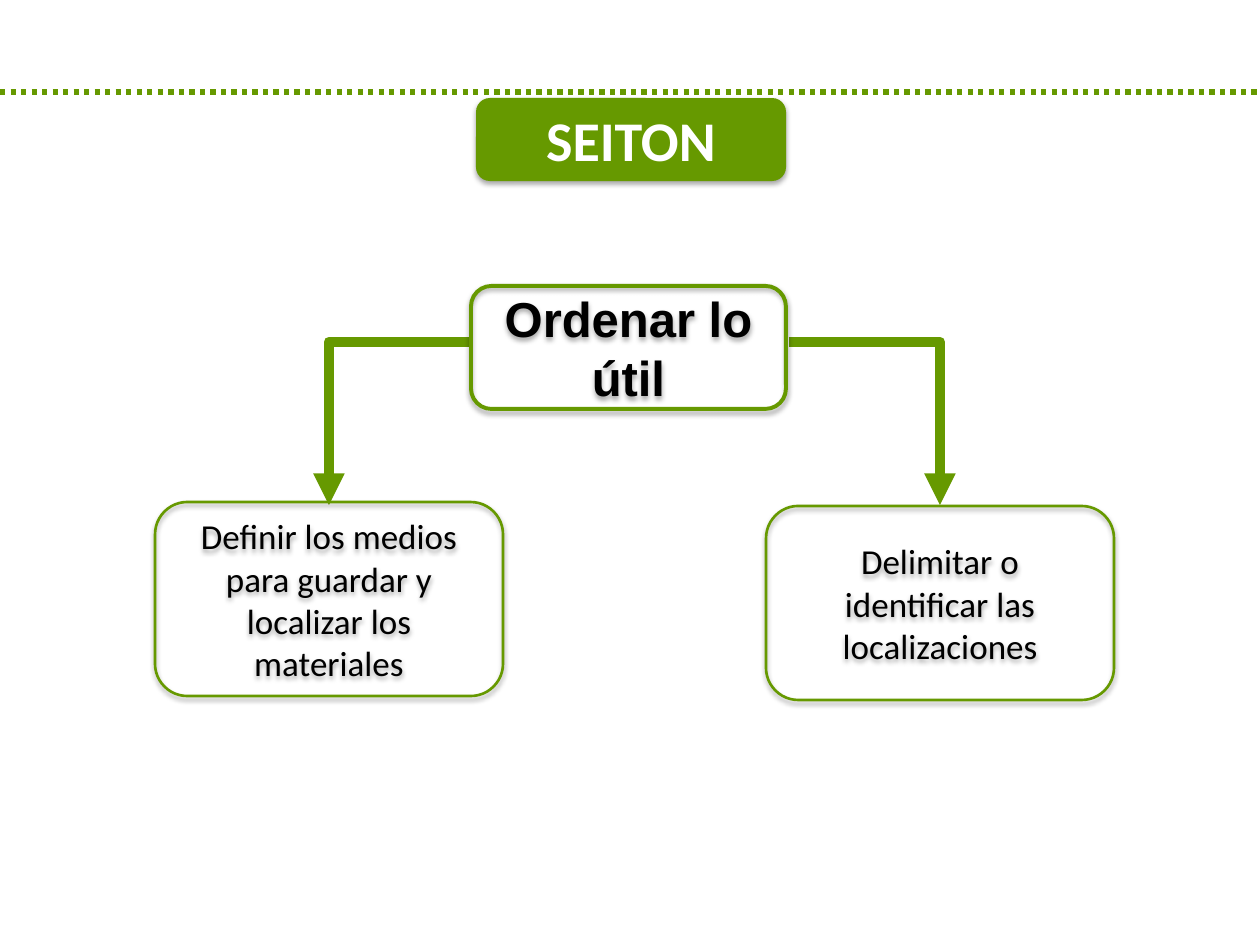
from lxml import etree
from pptx import Presentation
from pptx.dml.color import RGBColor
from pptx.enum.dml import MSO_LINE
from pptx.enum.shapes import MSO_CONNECTOR, MSO_SHAPE
from pptx.enum.text import MSO_ANCHOR, PP_ALIGN
from pptx.oxml.ns import qn
from pptx.util import Emu, Pt

EMU_PER_PX = 914400 / 126
ROUNDED = MSO_SHAPE.ROUNDED_RECTANGLE
STRAIGHT, ELBOW = MSO_CONNECTOR.STRAIGHT, MSO_CONNECTOR.ELBOW
DOTTED = MSO_LINE.ROUND_DOT
MIDDLE, CENTER = MSO_ANCHOR.MIDDLE, PP_ALIGN.CENTER
COLORS = {"green": "669900", "white": "FFFFFF", "black": "000000"}


def px(length):
    return Emu(round(length * EMU_PER_PX))


def color(name):
    return RGBColor.from_string(COLORS[name])


def add_soft_shadow(shape):
    shape.shadow.inherit = False
    effects = shape._element.spPr.find(qn("a:effectLst"))
    shadow = etree.SubElement(effects, qn("a:outerShdw"), blurRad=str(Pt(3.1)),
                              dist=str(Pt(1.8)), dir="5400000", rotWithShape="0")
    shade = etree.SubElement(shadow, qn("a:srgbClr"), val=COLORS["black"])
    etree.SubElement(shade, qn("a:alpha"), val="35000")


def add_box(slide, bounds, text, size, font_name="Calibri", bold=False,
            fill=None, outline=None, text_color="black"):
    shape = slide.shapes.add_shape(ROUNDED, *map(px, bounds))
    add_soft_shadow(shape)
    if fill:
        shape.fill.solid()
        shape.fill.fore_color.rgb = color(fill)
    else:
        shape.fill.background()
    if outline:
        shape.line.color.rgb = color("green")
        shape.line.width = Pt(outline)
    else:
        shape.line.fill.background()

    frame = shape.text_frame
    frame.word_wrap = True
    frame.vertical_anchor = MIDDLE
    paragraph = frame.paragraphs[0]
    paragraph.alignment = CENTER
    run = paragraph.add_run()
    run.text = text
    run.font.name = font_name
    run.font.size = Pt(size)
    run.font.bold = bold
    run.font.color.rgb = color(text_color)


def add_line(slide, kind, start, end, width):
    connector = slide.shapes.add_connector(kind, *map(px, start + end))
    connector.line.color.rgb = color("green")
    connector.line.width = Pt(width)
    etree.SubElement(connector._element.spPr, qn("a:effectLst"))
    return connector


def add_divider(slide, y, width):
    divider = add_line(slide, STRAIGHT, (0, y), (width, y), 3)
    divider.line.dash_style = DOTTED


def add_bent_arrow(slide, start, end):
    arrow = add_line(slide, ELBOW, start, end, 6)
    # One bend: sideways first, then down
    arrow._element.spPr.find(qn("a:prstGeom")).set("prst", "bentConnector2")
    etree.SubElement(arrow.line._get_or_add_ln(), qn("a:tailEnd"), type="triangle")


def main():
    presentation = Presentation()
    presentation.slide_width, presentation.slide_height = px(1260), px(945)
    slide = presentation.slides.add_slide(presentation.slide_layouts[6])

    # Heading
    add_divider(slide, 92, 1260)
    add_box(slide, (476, 98, 310, 83), "SEITON", 32, bold=True,
            fill="green", text_color="white")

    # Arrows from the main idea to its two steps
    add_bent_arrow(slide, (471, 342), (329, 505))
    add_bent_arrow(slide, (789, 342), (940, 505))

    # Main idea and steps
    add_box(slide, (471, 286, 315, 123), "Ordenar lo útil", 28,
            font_name="Arial", bold=True, outline=2.25)
    steps = [
        (155, 502, "Definir los medios para guardar y localizar los materiales"),
        (766, 506, "Delimitar o identificar las localizaciones"),
    ]
    for left, top, text in steps:
        add_box(slide, (left, top, 348, 194), text, 20, outline=1.5)

    presentation.save("out.pptx")


if __name__ == "__main__":
    main()
